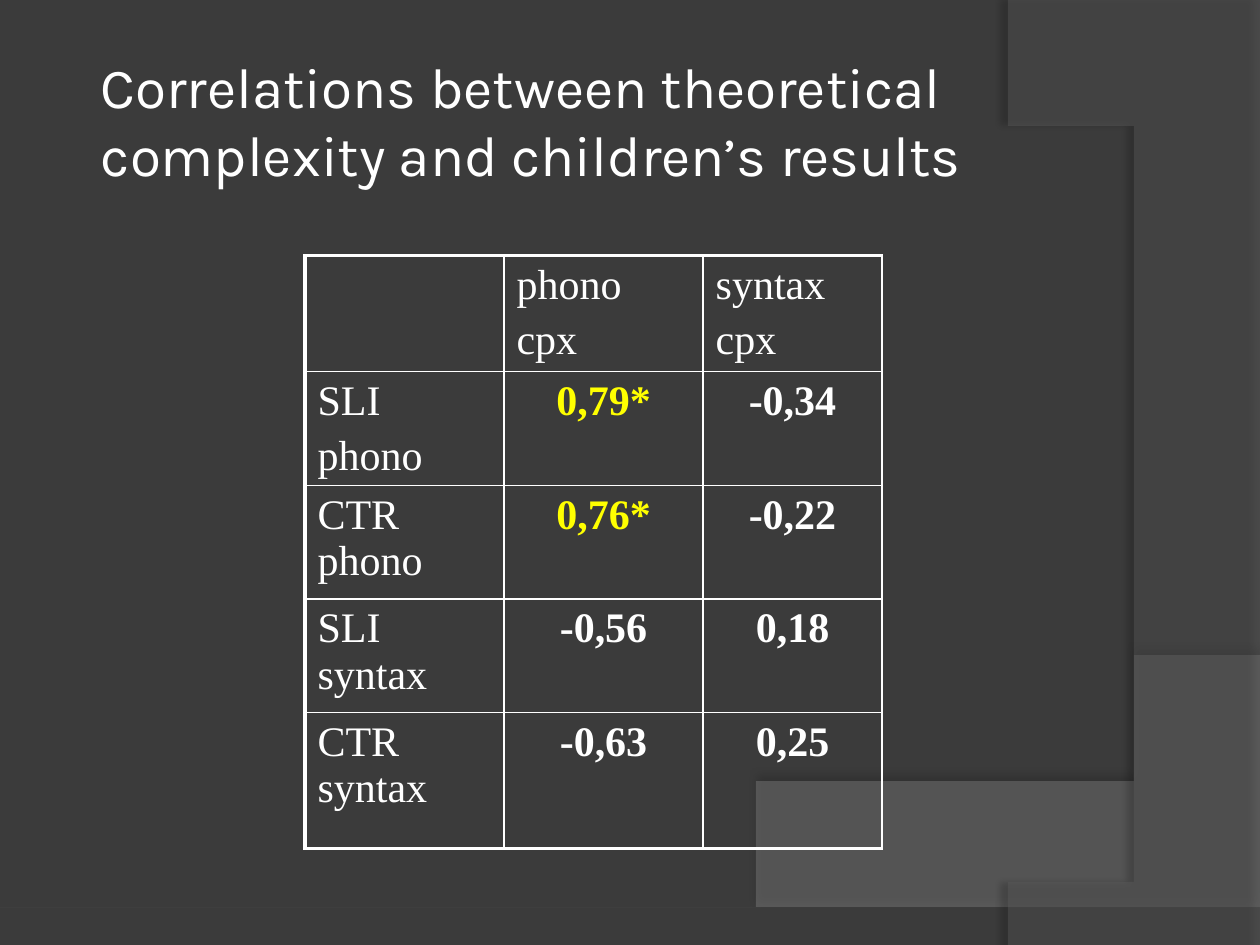
import lxml.etree
import pptx
import pptx.dml.color
import pptx.enum.text
import pptx.oxml
import pptx.oxml.ns
import pptx.util

Inches = pptx.util.Inches
Pt = pptx.util.Pt
qn = pptx.oxml.ns.qn
WHITE = "FFFFFF"
YELLOW = "FFFF00"
ROWS = [
    ("", "phono\ncpx", "syntax\ncpx"),
    ("SLI\nphono", "0,79*", "-0,34"),
    ("CTR phono", "0,76*", "-0,22"),
    ("SLI syntax", "-0,56", "0,18"),
    ("CTR syntax", "-0,63", "0,25"),
]
COLUMN_WIDTHS = [1.58, 1.58, 1.42]
ROW_HEIGHTS = [0.92, 0.9, 0.9, 0.9, 1.08]


def rgb(value):
    """Turn a hex string into a colour."""
    return pptx.dml.color.RGBColor.from_string(value)


def add_xml(parent, tag, **attributes):
    """Append a DrawingML element with the given attributes."""
    child = lxml.etree.SubElement(parent, qn(tag))
    for key, value in attributes.items():
        child.set(key, str(value))
    return child


def style_text(paragraph, size, font, color, bold=False):
    """Format every run of a paragraph."""
    for run in paragraph.runs:
        run.font.size = Pt(size)
        run.font.name = font
        run.font.bold = bold
        run.font.color.rgb = rgb(color)


def bezier(start, first, second, end, steps=60):
    """Return points along a cubic curve, without its start."""
    points = []
    for step in range(1, steps + 1):
        t = step / steps
        weights = ((1 - t) ** 3, 3 * t * (1 - t) ** 2, 3 * t * t * (1 - t), t ** 3)
        points.append(tuple(
            sum(w * p for w, p in zip(weights, axis))
            for axis in zip(start, first, second, end)
        ))
    return points


def add_sweep(slide, left, top, corners, curve, fill, opacity, shadow):
    """Draw a translucent sweep with straight corners and one curved edge."""
    builder = slide.shapes.build_freeform(*corners[0], scale=Inches(1))
    builder.add_line_segments(corners[1:] + bezier(corners[-1], *curve))
    sweep = builder.convert_to_shape(Inches(left), Inches(top))
    sweep.fill.solid()
    sweep.fill.fore_color.rgb = rgb(fill)
    sweep.line.fill.background()
    properties = sweep._element.spPr
    fill_color = properties.find(".//" + qn("a:srgbClr"))
    add_xml(fill_color, "a:alpha", val=opacity * 1000)
    blur, distance, angle, shade = shadow
    effects = add_xml(properties, "a:effectLst")
    outer = add_xml(effects, "a:outerShdw", blurRad=Pt(blur), dist=Pt(distance),
                    dir=angle * 60000, algn="ctr", rotWithShape=0)
    black = add_xml(outer, "a:srgbClr", val="000000")
    add_xml(black, "a:alpha", val=shade * 1000)


def add_background(slide):
    """Set the dark background and its two sweeps."""
    slide.background.fill.solid()
    slide.background.fill.fore_color.rgb = rgb("3B3B3B")
    add_sweep(slide, 0, 5.2, [(0, 1.85), (0, 2.3), (10, 2.3), (10, 0)],
              [(5.59, 2.09), (3.91, 1.99), (0, 1.85)],
              "7F7F7F", 45, (4, 3.5, 270, 35))
    add_sweep(slide, 8, 0, [(2, 0.02), (2, 7.5), (0.21, 7.5)],
              [(1.35, 6.19), (2.18, 3), (0, 0)],
              "5E5E5E", 40, (4, 4, 180, 45))


def place_title(slide, left, top, width, height):
    """Fill the title placeholder and bring it in front of the sweeps."""
    title = slide.shapes.title
    title.left, title.top = Inches(left), Inches(top)
    title.width, title.height = Inches(width), Inches(height)
    frame = title.text_frame
    frame.text = "Correlations between theoretical complexity and children’s results"
    frame.word_wrap = True
    frame.auto_size = pptx.enum.text.MSO_AUTO_SIZE.NONE
    frame.vertical_anchor = pptx.enum.text.MSO_ANCHOR.MIDDLE
    frame.margin_left = frame.margin_right = Inches(0.05)
    frame.margin_top = frame.margin_bottom = Inches(0.05)
    heading = frame.paragraphs[0]
    heading.alignment = pptx.enum.text.PP_ALIGN.LEFT
    style_text(heading, 32.4, "Karla", WHITE)
    slide.shapes._spTree.append(title._element)


def set_borders(cell, widths):
    """Draw white cell borders of the given widths by side."""
    properties = cell._tc.get_or_add_tcPr()
    for position, (side, width) in enumerate(widths.items()):
        line = lxml.etree.Element(qn("a:ln" + side), w=str(Pt(width)))
        add_xml(add_xml(line, "a:solidFill"), "a:srgbClr", val=WHITE)
        properties.insert(position, line)


def add_correlations(slide, left, top):
    """Add the correlation table with heavier left, top and bottom edges."""
    table = slide.shapes.add_table(
        len(ROWS), len(COLUMN_WIDTHS), Inches(left), Inches(top),
        Inches(sum(COLUMN_WIDTHS)), Inches(sum(ROW_HEIGHTS))).table
    table.first_row = table.horz_banding = False
    for column, width in zip(table.columns, COLUMN_WIDTHS):
        column.width = Inches(width)
    for row, height in zip(table.rows, ROW_HEIGHTS):
        row.height = Inches(height)
    last = len(ROWS) - 1
    for r, labels in enumerate(ROWS):
        for c, label in enumerate(labels):
            cell = table.cell(r, c)
            cell.text_frame.text = label
            cell.fill.background()
            is_value = r > 0 and c > 0
            color = YELLOW if label.endswith("*") else WHITE
            for paragraph in cell.text_frame.paragraphs:
                paragraph.space_before = Pt(4.8)
                if is_value:
                    paragraph.alignment = pptx.enum.text.PP_ALIGN.CENTER
                style_text(paragraph, 24, "Times New Roman", color, is_value)
            set_borders(cell, {
                "L": 2.25 if c == 0 else 1,
                "R": 1,
                "T": 2.25 if r == 0 else 1,
                "B": 2.25 if r == last else 1,
            })


def main():
    """Build and save the slide."""
    deck = pptx.Presentation()
    deck.slide_width, deck.slide_height = Inches(10), Inches(7.5)
    slide = deck.slides.add_slide(deck.slide_layouts[5])
    add_background(slide)
    place_title(slide, 0.75, 0.33, 8.5, 1.25)
    add_correlations(slide, 2.42, 2.03)
    deck.save("out.pptx")


if __name__ == "__main__":
    main()
